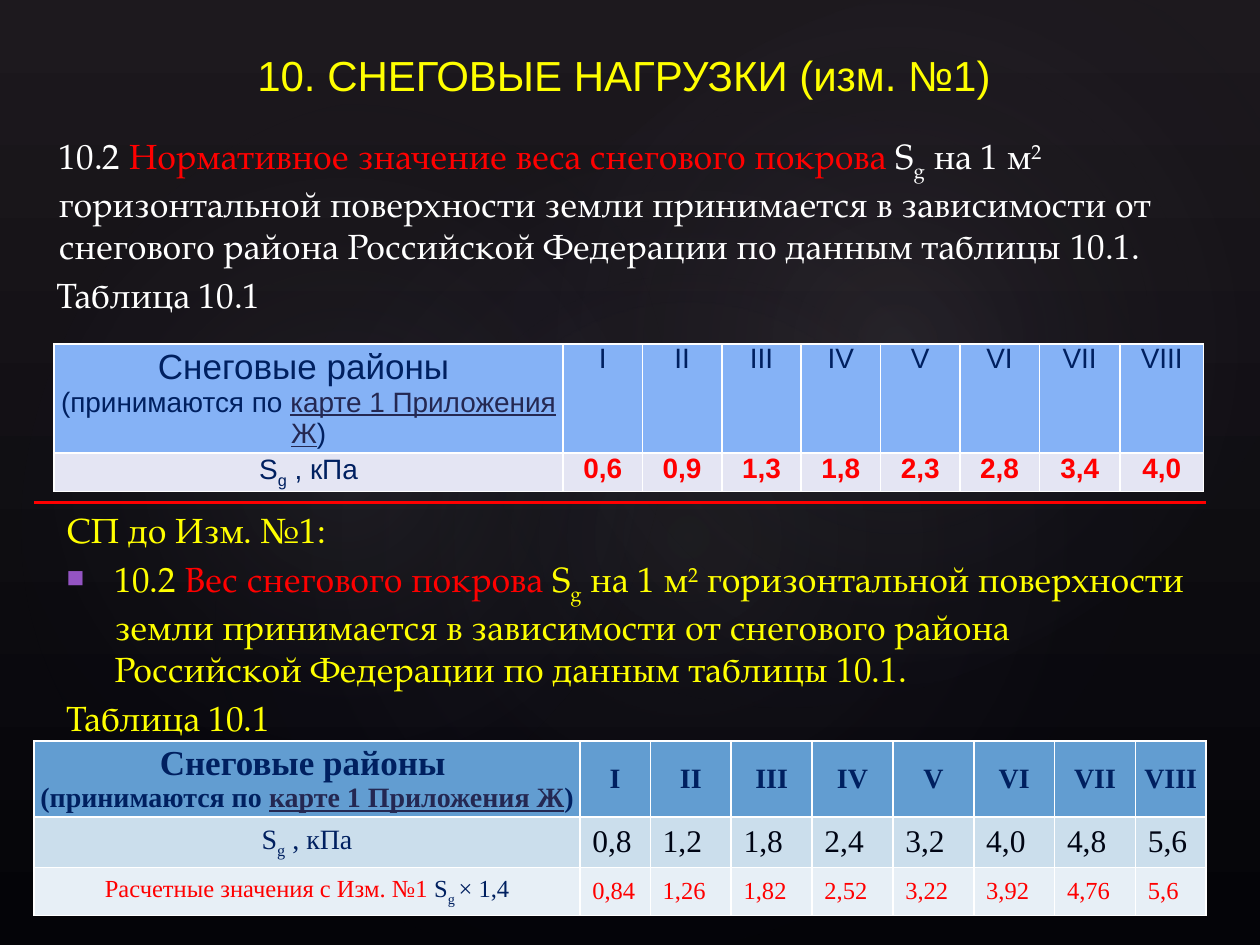
from dataclasses import dataclass
from typing import NamedTuple, Optional

from lxml.etree import SubElement
from pptx import Presentation
from pptx.dml.color import RGBColor
from pptx.enum.shapes import MSO_CONNECTOR, MSO_SHAPE
from pptx.enum.text import MSO_ANCHOR, PP_ALIGN
from pptx.oxml import parse_xml
from pptx.oxml.ns import nsdecls, qn
from pptx.util import Cm, Pt

WHITE = RGBColor(0xFF, 0xFF, 0xFF)
YELLOW = RGBColor(0xFF, 0xFF, 0x00)
RED = RGBColor(0xFF, 0x00, 0x00)
NAVY = RGBColor(0x00, 0x20, 0x60)
LINK = RGBColor(0x24, 0x28, 0x52)
INK = RGBColor(0x00, 0x05, 0x14)
PURPLE = RGBColor(0x94, 0x54, 0xC3)
NIGHT_TOP = RGBColor(0x1D, 0x19, 0x1E)
NIGHT_BOTTOM = RGBColor(0x04, 0x04, 0x08)
GLOW = RGBColor(0xC4, 0xBC, 0xC6)
CURRENT_HEAD = RGBColor(0x85, 0xB2, 0xF6)
CURRENT_ROW = RGBColor(0xE4, 0xE5, 0xF3)
FORMER_HEAD = RGBColor(0x62, 0x9D, 0xD1)
FORMER_ROW = RGBColor(0xCB, 0xDE, 0xEC)
DESIGN_ROW = RGBColor(0xE7, 0xEF, 0xF6)

SERIF, SANS, TIMES = "TeX Gyre Pagella", "Arial", "Times New Roman"
REGIONS = "I II III IV V VI VII VIII".split()


class Piece(NamedTuple):
    text: str
    color: RGBColor
    size: float = 20
    baseline: int = 0
    underline: bool = False


@dataclass
class Glow:
    left: float
    top: float
    width: float
    height: float
    rotation: float
    opacity: int


@dataclass
class LoadRow:
    label: list
    values: list
    height: float
    fill: RGBColor
    color: RGBColor
    size: float
    label_bold: bool = False
    value_bold: bool = False
    value_anchor: MSO_ANCHOR = MSO_ANCHOR.MIDDLE
    centered: bool = True


def add_text(paragraph, text: str, *, font: str, size: float, color: RGBColor,
             bold: bool = False, underline: bool = False, baseline: int = 0) -> None:
    run = paragraph.add_run()
    run.text = text
    run.font.name, run.font.size = font, Pt(size)
    run.font.bold, run.font.underline = bold, underline
    run.font.color.rgb = color
    if baseline:
        run.font._element.set("baseline", str(baseline * 1000))


def write_paragraph(paragraph, pieces: list, font: str, bold: bool = False,
                    align: PP_ALIGN = PP_ALIGN.LEFT, space: float = 0) -> None:
    paragraph.alignment = align
    if space:
        paragraph.space_before = Pt(space)
    for piece in pieces:
        add_text(paragraph, piece.text, font=font, size=piece.size, color=piece.color,
                 bold=bold, underline=piece.underline, baseline=piece.baseline)


def indent(paragraph, left: float, first: float = 0) -> None:
    properties = paragraph._p.get_or_add_pPr()
    properties.set("marL", str(Cm(left)))
    properties.set("indent", str(Cm(first)))


def add_bullet(paragraph) -> None:
    properties = paragraph._p.get_or_add_pPr()
    color = SubElement(properties, qn("a:buClr"))
    SubElement(color, qn("a:srgbClr")).set("val", str(PURPLE))
    SubElement(properties, qn("a:buSzPct")).set("val", "70000")
    SubElement(properties, qn("a:buChar")).set("char", "■")


def add_box(slide, left: float, top: float, width: float, height: float,
            anchor: MSO_ANCHOR = MSO_ANCHOR.TOP):
    frame = slide.shapes.add_textbox(Cm(left), Cm(top), Cm(width), Cm(height)).text_frame
    frame.word_wrap = True
    frame.vertical_anchor = anchor
    return frame


def add_glow(slide, glow: Glow) -> None:
    ellipse = slide.shapes.add_shape(MSO_SHAPE.OVAL, Cm(glow.left), Cm(glow.top),
                                     Cm(glow.width), Cm(glow.height))
    ellipse.rotation = glow.rotation
    ellipse.shadow.inherit = False
    ellipse.line.fill.background()
    ellipse.fill.background()
    properties = ellipse._element.spPr
    gradient = parse_xml(
        f'<a:gradFill {nsdecls("a")}><a:gsLst>'
        f'<a:gs pos="0"><a:srgbClr val="{GLOW}"><a:alpha val="{glow.opacity * 1000}"/></a:srgbClr></a:gs>'
        f'<a:gs pos="58000"><a:srgbClr val="{LINK}"><a:alpha val="0"/></a:srgbClr></a:gs>'
        '</a:gsLst><a:path path="circle"><a:fillToRect l="50000" t="50000" r="50000" b="50000"/>'
        '</a:path></a:gradFill>')
    properties.replace(properties.find(qn("a:noFill")), gradient)


def style_cell(cell, fill: RGBColor, anchor: MSO_ANCHOR, side: float, edge: float) -> None:
    cell.vertical_anchor = anchor
    cell.margin_left = cell.margin_right = Cm(side)
    cell.margin_top = cell.margin_bottom = Cm(edge)
    properties = cell._tc.get_or_add_tcPr()
    for border in ("lnL", "lnR", "lnT", "lnB"):
        line = SubElement(properties, qn(f"a:{border}"), w=str(Pt(1)))
        color = SubElement(SubElement(line, qn("a:solidFill")), qn("a:srgbClr"))
        color.set("val", str(WHITE))
    cell.fill.solid()
    cell.fill.fore_color.rgb = fill


def add_load_table(slide, left: float, top: float, widths: list, rows: list, font: str) -> None:
    table = slide.shapes.add_table(len(rows), len(widths), Cm(left), Cm(top), Cm(sum(widths)),
                                   Cm(sum(row.height for row in rows))).table
    table.first_row = table.horz_banding = False
    for column, width in zip(table.columns, widths):
        column.width = Cm(width)
    for index, row in enumerate(rows):
        table.rows[index].height = Cm(row.height)
        label = table.cell(index, 0)
        style_cell(label, row.fill, MSO_ANCHOR.MIDDLE, 0.05, 0)
        for number, pieces in enumerate(row.label):
            frame = label.text_frame
            paragraph = frame.add_paragraph() if number else frame.paragraphs[0]
            write_paragraph(paragraph, pieces, font, row.label_bold, PP_ALIGN.CENTER)
        side, edge = (0.05, 0) if row.centered else (0.25, 0.13)
        align = PP_ALIGN.CENTER if row.centered else PP_ALIGN.LEFT
        for column, value in enumerate(row.values, 1):
            cell = table.cell(index, column)
            style_cell(cell, row.fill, row.value_anchor, side, edge)
            write_paragraph(cell.text_frame.paragraphs[0], [Piece(value, row.color, row.size)],
                            font, row.value_bold, align)


def snow_clause(subject: str, color: RGBColor) -> list:
    return [Piece("10.2 ", color), Piece(subject, RED), Piece("S", color),
            Piece("g", color, baseline=-25), Piece(" на 1 м", color),
            Piece("2", color, baseline=30),
            Piece(" горизонтальной поверхности земли принимается в зависимости от снегового "
                  "района Российской Федерации по данным таблицы 10.1.", color)]


def main() -> None:
    deck = Presentation()
    deck.slide_width, deck.slide_height = Cm(25.4), Cm(19.05)
    slide = deck.slides.add_slide(deck.slide_layouts[6])
    night = slide.background.fill
    night.gradient()
    night.gradient_angle = 270
    for stop, color in zip(night.gradient_stops, (NIGHT_TOP, NIGHT_BOTTOM)):
        stop.color.rgb = color
    for glow in (Glow(3.81, 2.9, 20.12, 15.85, 328.7, 7),
                 Glow(-0.76, 3.25, 15.39, 12.45, 294.3, 8),
                 Glow(9.09, 0.33, 18.01, 13.21, 328.7, 8)):
        add_glow(slide, glow)

    heading = add_box(slide, 1.27, 0.76, 22.86, 1.37, MSO_ANCHOR.BOTTOM).paragraphs[0]
    heading.line_spacing = 0.8
    write_paragraph(heading, [Piece("10. СНЕГОВЫЕ НАГРУЗКИ (изм. №1) ", YELLOW, 24)],
                    SANS, align=PP_ALIGN.CENTER)

    current = add_box(slide, 0.89, 2.59, 23.19, 3.94)
    clause = current.paragraphs[0]
    indent(clause, 0.05)
    write_paragraph(clause, snow_clause("Нормативное значение веса снегового покрова ", WHITE), SERIF)
    write_paragraph(current.add_paragraph(), [Piece("Таблица 10.1", WHITE)], SERIF, space=4)

    regions_label = [[Piece("Снеговые районы ", NAVY)],
                     [Piece("(принимаются по ", NAVY, 16),
                      Piece("карте 1 Приложения Ж", LINK, 16, underline=True),
                      Piece(")", NAVY, 16)]]
    load_label = [[Piece("S", NAVY, 16), Piece("g", NAVY, 16, -25), Piece(" , кПа", NAVY, 16)]]
    design_label = [[Piece("Расчетные значения с Изм. №1 ", RED, 14), Piece("S", NAVY, 14),
                     Piece("g ", NAVY, 14, -25), Piece("× 1,4", NAVY, 14)]]
    add_load_table(slide, 1.09, 6.93, [10.26] + [1.6] * 6 + [1.63, 1.68], [
        LoadRow(regions_label, REGIONS, 2.03, CURRENT_HEAD, NAVY, 16, value_anchor=MSO_ANCHOR.TOP),
        LoadRow(load_label, "0,6 0,9 1,3 1,8 2,3 2,8 3,4 4,0".split(), 0.73, CURRENT_ROW, RED, 16,
                value_bold=True, value_anchor=MSO_ANCHOR.TOP)], SANS)

    divider = slide.shapes.add_connector(MSO_CONNECTOR.STRAIGHT, Cm(0.69), Cm(10.13),
                                         Cm(24.31), Cm(10.13))
    divider.line.color.rgb, divider.line.width = RED, Pt(1.5)
    SubElement(divider._element.spPr, qn("a:effectLst"))

    former = add_box(slide, 1.09, 10.13, 23.19, 4.6)
    write_paragraph(former.paragraphs[0], [Piece("СП до Изм. №1:", YELLOW)], SERIF)
    former_clause = former.add_paragraph()
    indent(former_clause, 0.97, -0.97)
    add_bullet(former_clause)
    write_paragraph(former_clause, snow_clause("Вес снегового покрова ", YELLOW), SERIF, space=4)
    write_paragraph(former.add_paragraph(), [Piece("Таблица 10.1", YELLOW)], SERIF, space=4)

    add_load_table(slide, 0.69, 14.94, [11, 1.42] + [1.63] * 6 + [1.42], [
        LoadRow(regions_label, REGIONS, 1.52, FORMER_HEAD, NAVY, 16, True, True),
        LoadRow(load_label, "0,8 1,2 1,8 2,4 3,2 4,0 4,8 5,6".split(), 1.02, FORMER_ROW, INK, 18,
                centered=False),
        LoadRow(design_label, "0,84 1,26 1,82 2,52 3,22 3,92 4,76 5,6".split(), 0.97, DESIGN_ROW,
                RED, 14, centered=False)], TIMES)
    deck.save("out.pptx")


if __name__ == "__main__":
    main()
